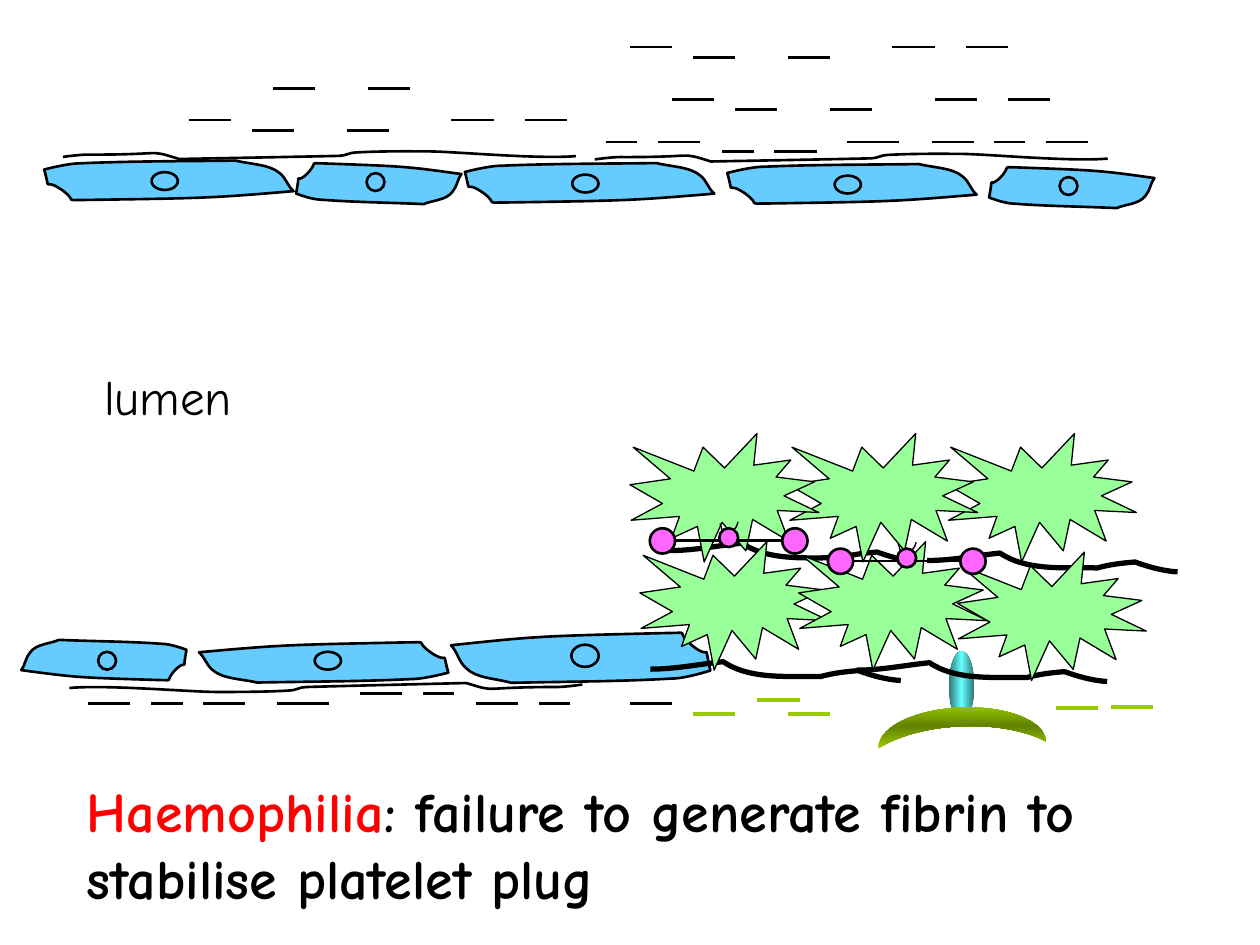
from copy import deepcopy

from pptx import Presentation
from pptx.dml.color import RGBColor
from pptx.enum.shapes import MSO_CONNECTOR as Link, MSO_SHAPE as Kind
from pptx.oxml.ns import qn
from pptx.oxml.xmlchemy import OxmlElement as Elem
from pptx.util import Cm, Pt

BLACK = RGBColor(0x00, 0x00, 0x00)
RED = RGBColor(0xFF, 0x00, 0x00)
BLUE = RGBColor(0x66, 0xCC, 0xFF)
LIME = RGBColor(0x99, 0xCC, 0x00)
OLIVE = RGBColor(0x61, 0x82, 0x00)
MINT = RGBColor(0x99, 0xFF, 0x99)
PINK = RGBColor(0xFF, 0x66, 0xFF)
TEAL = RGBColor(0x2F, 0x76, 0x76)
AQUA = RGBColor(0x66, 0xFF, 0xFF)
FONT = "Comic Neue"
TURN = 180.3

# Outlines in cm: a start point, then two handles and an end for each curve
LONG = [(4.22, 0.05), (1.73, 0.1), (1.68, 0.1), (0, 0.25),
        (0.13, 0.36), (0.15, 0.51), (0.28, 0.61),
        (0.48, 0.79), (0.89, 0.79), (1.17, 0.86),
        (2.21, 0.84), (3.28, 0.84), (4.29, 0.79),
        (4.55, 0.79), (5.03, 0.66), (5.03, 0.66),
        (4.88, 0.13), (5.08, 0.53), (4.67, 0.25),
        (4.32, 0), (4.67, 0.05), (4.22, 0.05)]
SHORT = [(2.79, 0.81), (1.14, 0.76), (1.12, 0.76), (0, 0.61),
         (0.08, 0.51), (0.08, 0.36), (0.18, 0.25),
         (0.3, 0.08), (0.58, 0.08), (0.76, 0),
         (1.47, 0.03), (2.16, 0.03), (2.84, 0.08),
         (3.02, 0.08), (3.33, 0.2), (3.33, 0.2),
         (3.23, 0.74), (3.38, 0.33), (3.1, 0.61),
         (2.87, 0.86), (3.1, 0.81), (2.79, 0.81)]
WAVE = [(0, 0.1), (0.76, 0.03), (2.44, 0.18), (2.97, 0.18),
        (3.45, 0.18), (3.96, 0.18), (4.45, 0.15),
        (4.55, 0.15), (4.65, 0.08), (4.78, 0.08),
        (5.84, 0.05), (8, 0), (8, 0),
        (8.66, 0.2), (8.2, 0.08), (9.83, 0.08),
        (10, 0.08), (10.34, 0.03), (10.34, 0.03)]
FIBRIN = [(5.05, 0.38), (4.75, 0.36), (4.47, 0.28), (4.19, 0.18),
          (3.94, 0.2), (3.68, 0.23), (3.43, 0.3),
          (2.84, 0.28), (2.03, 0.38), (1.47, 0),
          (0.97, 0.05), (0.51, 0.15), (0, 0.15)]
HAIRS = [[(1.47, 0.05), (1.47, 0.03), (1.47, 0.03), (1.45, 0.03),
          (1.45, 0), (1.45, -0.03), (1.42, -0.08),
          (1.42, -0.1), (1.42, -0.08), (1.42, -0.1)],
         [(1.68, 0.03), (1.75, 0), (1.75, -0.05), (1.78, -0.13)]]

deck = Presentation()
deck.slide_width, deck.slide_height = Cm(25.4), Cm(19.05)
slide = deck.slides.add_slide(deck.slide_layouts[6])
shapes = slide.shapes


def paint(shape, width, fill=None, color=BLACK):
    """Set line and fill, and switch the shadow off."""
    shape.line.color.rgb = color
    shape.line.width = Pt(width)
    if fill is not None:
        shape.fill.solid()
        shape.fill.fore_color.rgb = fill
    elif hasattr(shape, "fill"):
        shape.fill.background()
    shape._element.spPr.append(Elem("a:effectLst"))


def curve(knots, x, y, sx=1, sy=1):
    """Add a freeform whose points are read as a chain of Bézier curves."""
    spots = [(Cm(x + sx * u), Cm(y + sy * v)) for u, v in knots]
    pen = shapes.build_freeform(*spots[0])
    pen.add_line_segments(spots[1:], close=knots[0] == knots[-1])
    shape = pen.convert_to_shape()
    legs = list(shape._element.spPr.iter(qn("a:lnTo")))
    for i in range(0, len(legs), 3):
        bend = Elem("a:cubicBezTo")
        legs[i].addprevious(bend)
        for leg in legs[i:i + 3]:
            bend.append(leg[0])
            leg.getparent().remove(leg)
    return shape


# Basement membrane: one below, two turned round above
for x, y, angle in [(1.4, 13.77, 0), (11.99, 3.07, TURN), (1.27, 3.02, TURN)]:
    wave = curve(WAVE, x, y)
    wave.rotation = angle
    paint(wave, 1.5)

# Cells, each with a nucleus
cells = [(SHORT, 0.43, 12.9, 1, 1, 0), (LONG, 4.01, 12.9, 1, 1, 0),
         (LONG, 9.09, 12.7, 1.04, 1.24, 0),
         (SHORT, 19.89, 3.33, 1, 1, TURN), (LONG, 14.61, 3.3, 1, 1, TURN),
         (LONG, 9.32, 3.28, 1, 1, TURN), (SHORT, 5.92, 3.25, 1, 1, TURN),
         (LONG, 0.84, 3.23, 1, 1, TURN)]
for knots, x, y, sx, sy, angle in cells:
    cell = curve(knots, x, y, sx, sy)
    cell.rotation = angle
    paint(cell, 1.5, BLUE)
    span, mid, size = (5.08, 2.6, 0.53) if knots is LONG else (3.38, 1.73, 0.36)
    if angle:
        mid = span - mid
    wide, high = size * sx, 0.36 * sy
    core = shapes.add_shape(Kind.OVAL, Cm(x + mid * sx - wide / 2),
                            Cm(y + 0.42 * sy - high / 2), Cm(wide), Cm(high))
    core.rotation = angle
    paint(core, 1.5, BLUE)

# Tissue dashes: left, top, length, colour, line width
row = [(1.78, 0, 0.85), (3.05, 0, 0.63), (4.09, 0, 0.85), (5.59, 0, 1.05),
       (7.26, 0.2, 0.85), (8.53, 0.2, 0.63), (9.6, 0, 0.85), (10.87, 0, 0.63)]
dashes = [(12.7, 14.18, 0.85, BLACK, 1.5)]
for x, rise, size in row:
    dashes.append((x, 14.18 - rise, size, BLACK, 1.5))
    dashes.append((23.72 - x - size, 2.86 + rise, size, BLACK, 1.5))
for left, top in [(3.81, 2.42), (13.55, 2.0), (12.7, 0.95)]:
    for dx, dy in [(0, 0), (1.27, 0.21), (3.18, 0.21), (5.29, 0), (6.77, 0)]:
        dashes.append((left + dx, top + dy, 0.85, BLACK, 1.5))
for x in (5.5, 7.41):
    dashes.append((x, 1.79, 0.85, BLACK, 1.5))
for x, y in [(13.97, 14.4), (15.88, 14.4), (21.29, 14.27), (22.4, 14.25), (15.27, 14.12)]:
    dashes.append((x, y, 0.85, LIME, 2.25))
for x, y, size, color, width in dashes:
    dash = shapes.add_connector(Link.STRAIGHT, Cm(x), Cm(y), Cm(x + size), Cm(y))
    paint(dash, width, color=color)

# Receptor on its base
stem = shapes.add_shape(Kind.OVAL, Cm(19.13), Cm(13.13), Cm(0.51), Cm(1.4))
base = shapes.add_shape(Kind.MOON, Cm(19), Cm(12.95), Cm(0.76), Cm(3.38))
base.rotation = 87.6
for shape, edge, inner, angle in [(stem, TEAL, AQUA, 0), (base, LIME, OLIVE, 90)]:
    shape.shadow.inherit = False
    shape.line.fill.background()
    shape.fill.gradient()
    shape.fill.gradient_angle = angle
    shape._element.spPr.find(qn("a:gradFill")).set("rotWithShape", "0")
    stops = shape._element.spPr.find(".//" + qn("a:gsLst"))
    stops.insert(1, deepcopy(stops[0]))
    for stop, place, color in zip(shape.fill.gradient_stops, (0, 0.5, 1), (edge, inner, edge)):
        stop.position = place
        stop.color.rgb = color

# Fibrin strands, then platelets
for x, y in [(17.27, 13.36), (13.11, 13.34), (18.69, 11.15), (13.49, 10.95)]:
    paint(curve(FIBRIN, x, y), 3)
for x, y in [(12.9, 10.92), (16.1, 10.92), (19.3, 11.13),
             (19.1, 8.74), (15.9, 8.74), (12.7, 8.74)]:
    star = shapes.add_shape(Kind.EXPLOSION1, Cm(x), Cm(y), Cm(3.81), Cm(2.59))
    paint(star, 0.75, MINT)

# Fibrinogen bridges
for x, y in [(13.1, 10.65), (16.69, 11.06)]:
    bar = shapes.add_connector(Link.STRAIGHT, Cm(x + 0.51), Cm(y + 0.25),
                               Cm(x + 2.8), Cm(y + 0.25))
    paint(bar, 1.5)
    for dx, size in [(0, 0.51), (1.4, 0.38), (2.67, 0.51)]:
        ball = shapes.add_shape(Kind.OVAL, Cm(x + dx), Cm(y), Cm(size), Cm(size))
        paint(ball, 1.5, PINK)
    for hair in HAIRS:
        paint(curve(hair, x, y), 0.75, PINK)

# Labels
labels = [((1.85, 7.26, 3.12, 1.45), 28, None, False, [("lumen", BLACK)]),
          ((1.5, 15.52, 22.81, 2.97), 32, True, True,
           [("Haemophilia", RED),
            (": failure to generate fibrin to stabilise platelet plug", BLACK)])]
for box, size, bold, wrap, parts in labels:
    frame = shapes.add_textbox(*map(Cm, box)).text_frame
    frame.word_wrap = wrap
    para = frame.paragraphs[0]
    para.font.name, para.font.size, para.font.bold = FONT, Pt(size), bold
    for text, color in parts:
        run = para.add_run()
        run.text = text
        run.font.color.rgb = color

deck.save("out.pptx")
